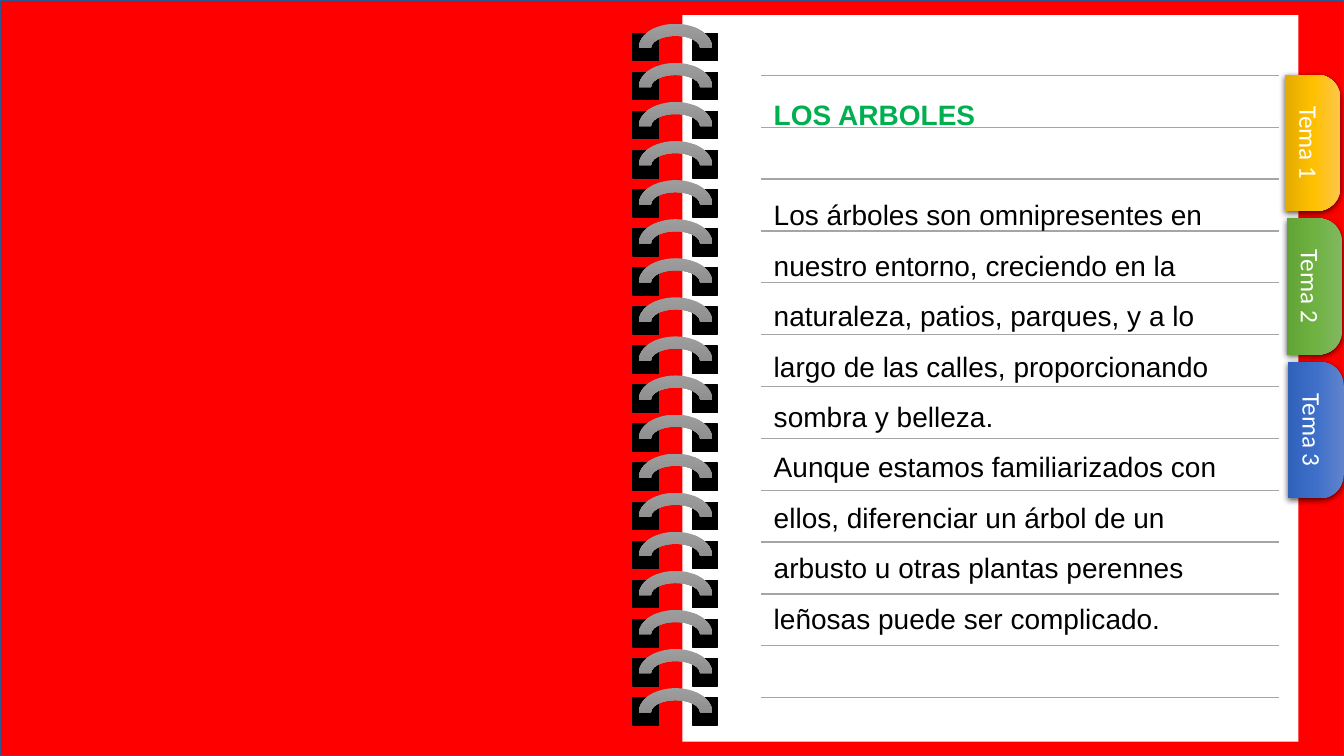
from copy import deepcopy
from dataclasses import dataclass

from lxml.etree import SubElement
from pptx import Presentation
from pptx.dml.color import RGBColor
from pptx.enum.shapes import MSO_CONNECTOR, MSO_SHAPE
from pptx.enum.text import MSO_ANCHOR, MSO_AUTO_SIZE, PP_ALIGN
from pptx.oxml.ns import qn
from pptx.util import Cm, Pt


@dataclass(frozen=True)
class Theme:
    cover: str = "FF0000"
    cover_edge: str = "325491"
    paper: str = "FFFFFF"
    hole: str = "000000"
    rule: str = "A5A5A5"
    ring: tuple = ("9D9D9D", "909090", "7C7C7C")
    yellow: tuple = ("FFC64B", "FFC000", "E3AB00")
    green: tuple = ("81B861", "6FB242", "62A336")
    blue: tuple = ("6183CB", "3E70CA", "3062BB")
    title: str = "00B050"
    body: str = "000000"
    tab_text: str = "FFFFFF"
    body_font: str = "Arial"
    tab_font: str = "Calibri"
    body_size: int = 20
    tab_size: int = 18


THEME = Theme()
RINGS = 18
RULES = 13
BODY = (
    "Los árboles son omnipresentes en nuestro entorno, creciendo en la "
    "naturaleza, patios, parques, y a lo largo de las calles, "
    "proporcionando sombra y belleza.",
    "Aunque estamos familiarizados con ellos, diferenciar un árbol de un "
    "arbusto u otras plantas perennes leñosas puede ser complicado.",
)


def spread(first, last, count):
    """Evenly spaced positions from first to last."""
    return [first + (last - first) * i / (count - 1) for i in range(count)]


def fill_gradient(sp, colors):
    sp.fill.gradient()
    stops = sp._element.spPr.find(".//" + qn("a:gsLst"))
    stops.insert(1, deepcopy(stops[0]))
    for stop, color, position in zip(sp.fill.gradient_stops, colors, (0, 0.5, 1)):
        stop.color.rgb = RGBColor.from_string(color)
        stop.position = position
    sp.fill.gradient_angle = 270


def add_block(shapes, kind, left, top, width, height, fill, line=None):
    sp = shapes.add_shape(kind, Cm(left), Cm(top), Cm(width), Cm(height))
    sp.shadow.inherit = False
    if isinstance(fill, tuple):
        fill_gradient(sp, fill)
    else:
        sp.fill.solid()
        sp.fill.fore_color.rgb = RGBColor.from_string(fill)
    if line:
        sp.line.color.rgb = RGBColor.from_string(line)
        sp.line.width = Pt(1)
    else:
        sp.line.fill.background()
    return sp


def add_text(tf, text, *, font, size, color, bold=False, align=PP_ALIGN.LEFT,
             spacing=1.0, before=0):
    p = tf.paragraphs[0]
    if p.runs:
        p = tf.add_paragraph()
    p.alignment = align
    p.line_spacing = spacing
    p.space_before = Pt(before)
    r = p.add_run()
    r.text = text
    r.font.name = font
    r.font.size = Pt(size)
    r.font.bold = bold
    r.font.color.rgb = RGBColor.from_string(color)


def add_ring(shapes, top):
    group = shapes.add_group_shape().shapes
    for left in (17.45, 15.95):
        add_block(group, MSO_SHAPE.RECTANGLE, left, top, 0.64, 0.69,
                  THEME.hole, THEME.hole)
    add_block(group, MSO_SHAPE.BLOCK_ARC, 16.1, top - 0.24, 1.85, 1.22, THEME.ring)


def add_rule(shapes, y):
    line = shapes.add_connector(MSO_CONNECTOR.STRAIGHT,
                                Cm(19.18), Cm(y), Cm(32.23), Cm(y))
    line.line.color.rgb = RGBColor.from_string(THEME.rule)
    line.line.width = Pt(1)
    SubElement(line._element.spPr, qn("a:effectLst"))


def add_shadow(sp):
    effects = sp._element.spPr.find(qn("a:effectLst"))
    shadow = SubElement(effects, qn("a:outerShdw"), blurRad=str(Pt(4.5)),
                        dist=str(Pt(1.5)), dir="5400000", algn="ctr",
                        rotWithShape="0")
    color = SubElement(shadow, qn("a:srgbClr"), val="000000")
    SubElement(color, qn("a:alpha"), val="63000")


def add_tab(shapes, left, top, label, colors):
    sp = add_block(shapes, MSO_SHAPE.ROUND_2_SAME_RECTANGLE,
                   left, top, 3.43, 1.4, colors)
    sp.rotation = 90
    sp.adjustments[0] = 0.428
    add_shadow(sp)
    tf = sp.text_frame
    tf.vertical_anchor = MSO_ANCHOR.MIDDLE
    add_text(tf, label, font=THEME.tab_font, size=THEME.tab_size,
             color=THEME.tab_text, align=PP_ALIGN.CENTER)


def add_note(shapes):
    tf = shapes.add_textbox(Cm(19.25), Cm(1.9), Cm(12.14), Cm(14.2)).text_frame
    tf.word_wrap = True
    tf.auto_size = MSO_AUTO_SIZE.SHAPE_TO_FIT_TEXT
    style = dict(font=THEME.body_font, size=THEME.body_size, spacing=1.5)
    add_text(tf, "LOS ARBOLES", color=THEME.title, bold=True, **style)
    for text, before in zip(BODY, (36, 0)):
        add_text(tf, text, color=THEME.body, before=before, **style)


def main():
    prs = Presentation()
    prs.slide_width, prs.slide_height = Cm(33.87), Cm(19.05)
    s = prs.slides.add_slide(prs.slide_layouts[6])

    # Cover and page
    add_block(s.shapes, MSO_SHAPE.RECTANGLE, 0, 0, 33.87, 19.05,
              THEME.cover, THEME.cover_edge)
    add_block(s.shapes, MSO_SHAPE.RECTANGLE, 17.2, 0.38, 15.52, 18.31, THEME.paper)

    # Ruled lines
    rules = s.shapes.add_group_shape().shapes
    for y in spread(1.9, 17.58, RULES):
        add_rule(rules, y)

    # Spiral binding
    for top in spread(0.84, 17.58, RINGS):
        add_ring(s.shapes, top)

    # Index tabs
    for i, colors in enumerate((THEME.yellow, THEME.green, THEME.blue)):
        add_tab(s.shapes, 31.37 + 0.04 * i, 2.9 + 3.62 * i, f"Tema {i + 1}", colors)

    # Written text
    add_note(s.shapes)

    prs.save("out.pptx")


if __name__ == "__main__":
    main()
